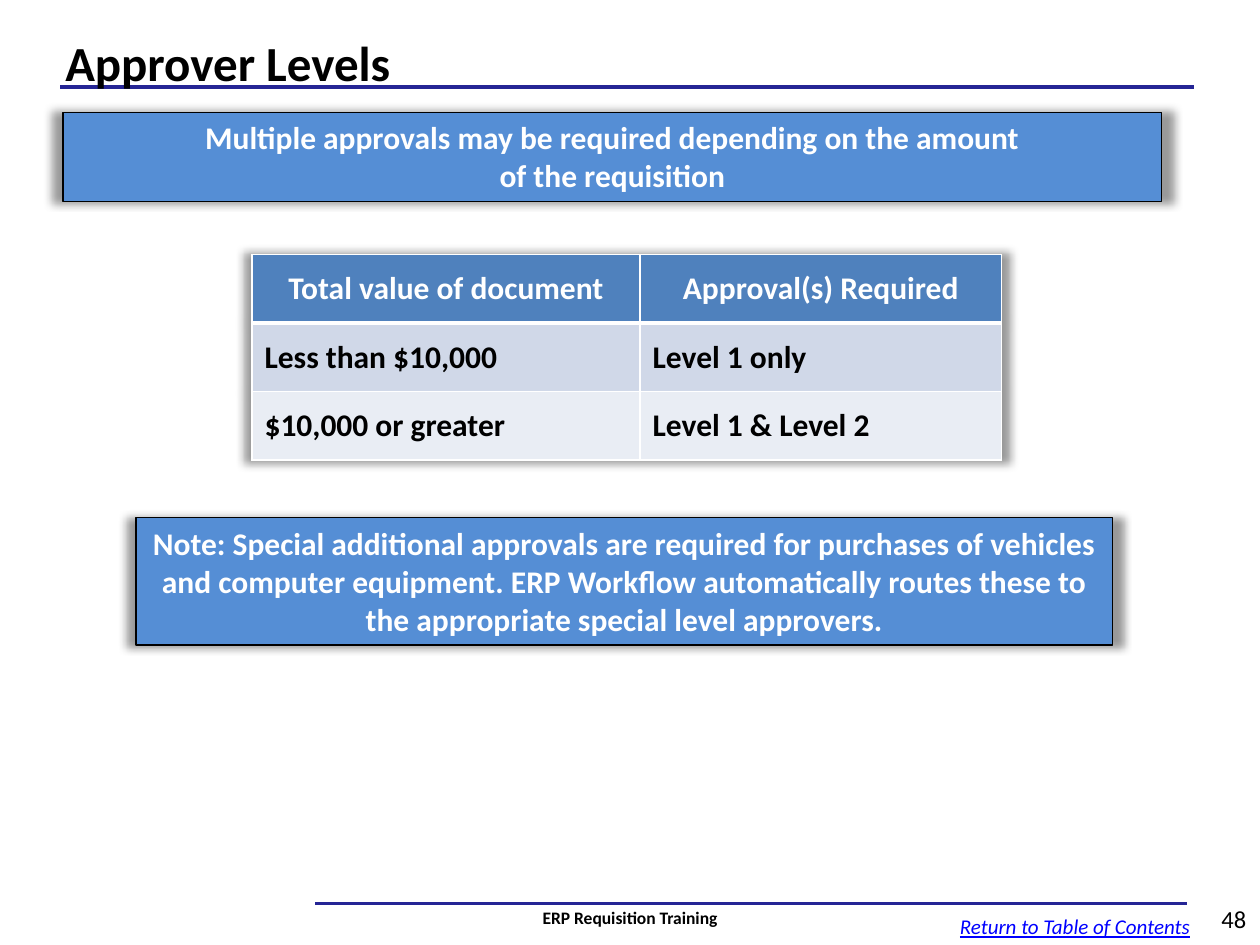
from dataclasses import dataclass, field
from typing import Any

import pptx
import pptx.dml.color
import pptx.enum.shapes
import pptx.enum.text
import pptx.oxml
import pptx.oxml.ns
import pptx.util

COLORS = {
    "rule": "252595", "black": "000000", "white": "FFFFFF", "link": "0000FF",
    "banner": "558ED5", "head": "4F81BD", "band1": "D0D8E8", "band2": "E9EDF4",
}
# Grid of 100 columns by 75 rows over a 10 x 7.5 inch slide
UNIT = pptx.util.Inches(0.1)
COLS, ROWS = 100, 75
NS = pptx.oxml.ns.nsdecls("a")
ALIGN = pptx.enum.text.PP_ALIGN
ANCHOR = pptx.enum.text.MSO_ANCHOR
AUTO = pptx.enum.text.MSO_AUTO_SIZE


@dataclass
class Rule:
    left: float
    right: float
    row: float
    weight: float


@dataclass
class Label:
    box: tuple[float, float, float, float]  # column, row, columns, rows
    lines: list[str]
    size: float = 18
    color: str = "black"
    align: Any = ALIGN.CENTER
    font: dict[str, Any] = field(default_factory=lambda: {"bold": True})
    frame: dict[str, Any] = field(
        default_factory=lambda: {"vertical_anchor": ANCHOR.MIDDLE})
    banner: bool = False


def grid(*units: float) -> list[int]:
    return [round(u * UNIT) for u in units]


def rgb(name: str) -> pptx.dml.color.RGBColor:
    return pptx.dml.color.RGBColor.from_string(COLORS[name])


def glow_shadow() -> Any:
    return pptx.oxml.parse_xml(
        f'<a:effectLst {NS}><a:outerShdw blurRad="63500" sx="102000" sy="102000" '
        f'algn="ctr" rotWithShape="0"><a:srgbClr val="{COLORS["black"]}">'
        '<a:alpha val="40000"/></a:srgbClr></a:outerShdw></a:effectLst>')


def write(tf: Any, lines: list[str], size: float, color: str, align: Any,
          font: dict[str, Any]) -> None:
    for i, line in enumerate(lines):
        p = tf.add_paragraph() if i else tf.paragraphs[0]
        p.alignment = align
        r = p.add_run()
        r.text = line
        r.font.color.rgb = rgb(color)
        settings = {"name": "Calibri", "size": pptx.util.Pt(size), **font}
        for key, value in settings.items():
            setattr(r.font, key, value)


def draw_rule(s: Any, rule: Rule) -> None:
    cx = s.shapes.add_connector(
        pptx.enum.shapes.MSO_CONNECTOR.STRAIGHT,
        *grid(rule.left, rule.row, rule.right, rule.row))
    cx.line.color.rgb = rgb("rule")
    cx.line.width = pptx.util.Pt(rule.weight)
    cx._element.spPr.append(pptx.oxml.parse_xml(f"<a:effectLst {NS}/>"))


def draw_label(s: Any, label: Label) -> None:
    if label.banner:
        sp = s.shapes.add_shape(
            pptx.enum.shapes.MSO_SHAPE.RECTANGLE, *grid(*label.box))
        sp.fill.solid()
        sp.fill.fore_color.rgb = rgb("banner")
        sp.line.color.rgb = rgb("black")
        sp.line.width = pptx.util.Pt(0.75)
        sp._element.spPr.append(glow_shadow())
    else:
        sp = s.shapes.add_textbox(*grid(*label.box))
    tf = sp.text_frame
    for key, value in {"word_wrap": True, **label.frame}.items():
        setattr(tf, key, value)
    write(tf, label.lines, label.size, label.color, label.align, label.font)


def draw_table(s: Any, box: tuple[float, float, float, float],
               widths: list[float], rows: list[list[str]]) -> None:
    table = s.shapes.add_table(len(rows), len(widths), *grid(*box)).table
    table._tbl.tblPr.insert(0, glow_shadow())
    for column, width in zip(table.columns, grid(*widths)):
        column.width = width
    for row, texts, fill in zip(table.rows, rows, ["head", "band1", "band2"]):
        header = fill == "head"
        for cell, text in zip(row.cells, texts):
            tcPr = cell._tc.get_or_add_tcPr()
            for side in "LRTB":
                weight = 3 if header and side == "B" else 1
                tcPr.append(pptx.oxml.parse_xml(
                    f'<a:ln{side} {NS} w="{weight * 12700}"><a:solidFill>'
                    f'<a:srgbClr val="{COLORS["white"]}"/></a:solidFill></a:ln{side}>'))
            cell.fill.solid()
            cell.fill.fore_color.rgb = rgb(fill)
            cell.vertical_anchor = ANCHOR.MIDDLE
            write(cell.text_frame, [text], 18, "white" if header else "black",
                  ALIGN.CENTER if header else ALIGN.LEFT, {"bold": True})


RULES = [Rule(4.8, 94.8, 6.9, 2.25), Rule(25, 94.2, 71.7, 1.5)]
TITLE = Label((4.2, 0.9, 90.8, 8), ["Approver Levels"], 28, align=ALIGN.LEFT)
TABLE_ROWS = [
    ["Total value of document", "Approval(s) Required"],
    ["Less than $10,000", "Level 1 only"],
    ["$10,000 or greater", "Level 1 & Level 2"],
]
GROW = {"auto_size": AUTO.SHAPE_TO_FIT_TEXT, "vertical_anchor": ANCHOR.TOP}
LABELS = [
    # Banners
    Label((10.8, 41.1, 77.5, 10.1),
          ["Note: Special additional approvals are required for purchases of "
           "vehicles and computer equipment. ERP Workflow automatically routes "
           "these to the appropriate special level approvers."],
          color="white", frame=GROW, banner=True),
    Label((5, 8.9, 87.2, 7.1),
          ["Multiple approvals may be required depending on the amount",
           "of the requisition"],
          color="white", frame=GROW, banner=True),
    # Footer
    Label((93.9, 70.9, 6, 4), ["48"], 14, align=ALIGN.RIGHT, font={}),
    Label((75.2, 72, 20.4, 3), ["Return to Table of Contents"], 12, "link",
          ALIGN.LEFT, {"italic": True, "underline": True},
          {**GROW, "word_wrap": False}),
    Label((20.1, 70.8, 59.8, 4), ["ERP Requisition Training"], 10),
]


def main() -> None:
    prs = pptx.Presentation()
    prs.slide_width, prs.slide_height = grid(COLS, ROWS)
    s = prs.slides.add_slide(prs.slide_layouts[6])
    for rule in RULES:
        draw_rule(s, rule)
    draw_label(s, TITLE)
    draw_table(s, (20, 20.2, 59.5, 16.3), [30.8, 28.7], TABLE_ROWS)
    for label in LABELS:
        draw_label(s, label)
    prs.save("out.pptx")


if __name__ == "__main__":
    main()
